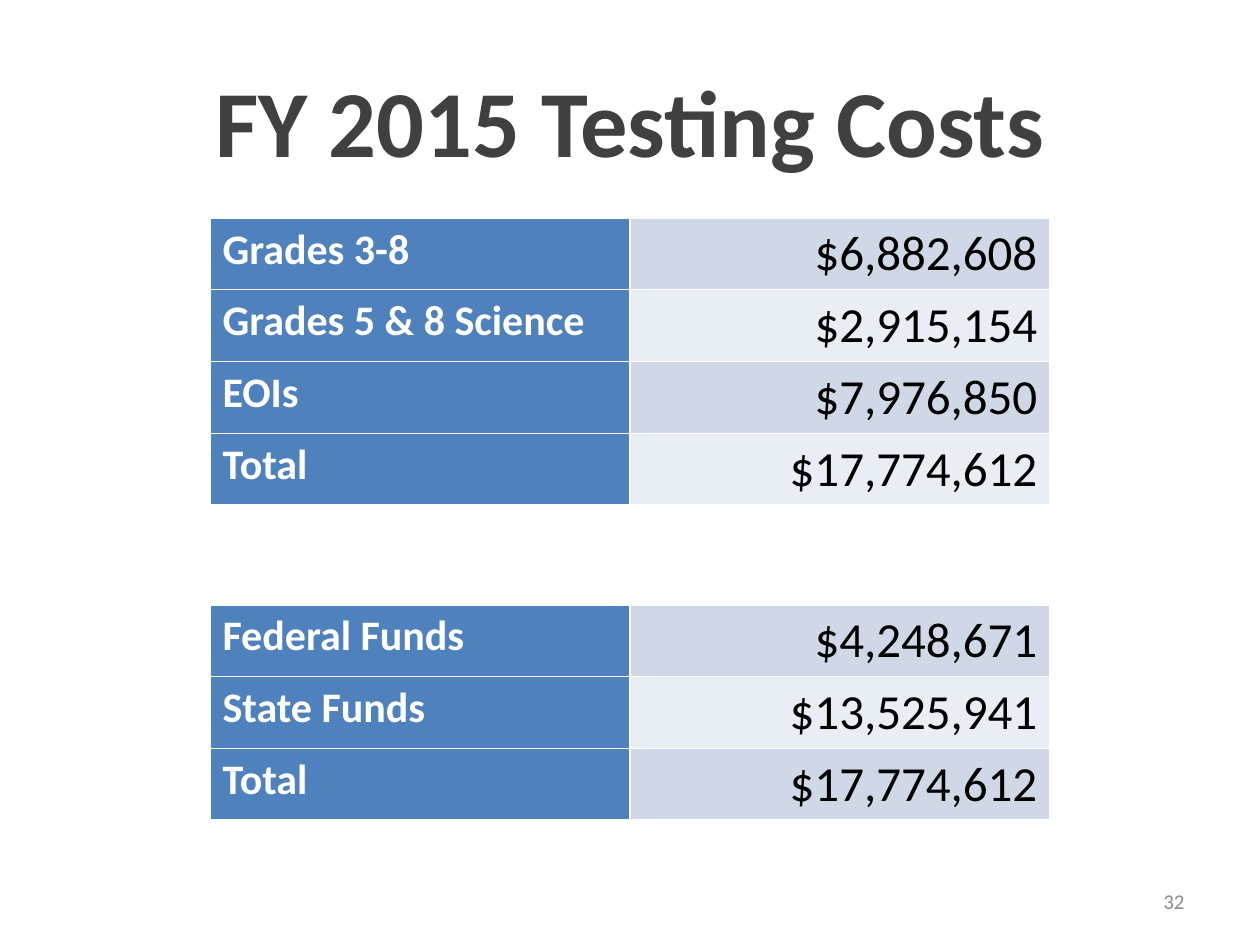
from dataclasses import dataclass

from lxml import etree
from pptx import Presentation
from pptx.dml.color import RGBColor
from pptx.enum.text import MSO_ANCHOR, PP_ALIGN
from pptx.oxml.ns import qn
from pptx.util import Inches, Pt

LEFT, CENTER, RIGHT = PP_ALIGN.LEFT, PP_ALIGN.CENTER, PP_ALIGN.RIGHT
TOP, MIDDLE = MSO_ANCHOR.TOP, MSO_ANCHOR.MIDDLE
TITLE_ONLY = 5


@dataclass(frozen=True)
class Theme:
    font: str = "Calibri"
    title: str = "404040"
    label: str = "FFFFFF"
    label_fill: str = "4F81BD"
    amount: str = "000000"
    bands: tuple = ("D0D8E8", "E9EDF4")
    border: str = "FFFFFF"
    number: str = "8C8C8C"
    title_size: int = 54
    label_size: int = 24
    amount_size: int = 28
    number_size: int = 12


THEME = Theme()
WIDTH, HEIGHT = Inches(10), Inches(7.5)
COLUMN = WIDTH // 6
ROW = Inches(0.57)

COSTS = [
    ("Grades 3-8", "$6,882,608"),
    ("Grades 5 & 8 Science", "$2,915,154"),
    ("EOIs", "$7,976,850"),
    ("Total", "$17,774,612"),
]
FUNDING = [
    ("Federal Funds", "$4,248,671"),
    ("State Funds", "$13,525,941"),
    ("Total", "$17,774,612"),
]


def write(frame, text, size, color, align, bold=False):
    paragraph = frame.paragraphs[0]
    paragraph.alignment = align
    run = paragraph.add_run()
    run.text = text
    run.font.name = THEME.font
    run.font.size = Pt(size)
    run.font.bold = bold
    run.font.color.rgb = RGBColor.from_string(color)


def add_title(slide, text):
    title = slide.shapes.title
    title.left, title.top = 0, Inches(0.42)
    title.width, title.height = WIDTH, Inches(1.17)
    frame = title.text_frame
    frame.vertical_anchor = TOP
    frame.margin_top = Inches(0.08)
    write(frame, text, THEME.title_size, THEME.title, CENTER, True)


def draw_borders(cell):
    properties = cell._tc.get_or_add_tcPr()
    for side in ("a:lnL", "a:lnR", "a:lnT", "a:lnB"):
        line = etree.SubElement(properties, qn(side), w=str(Pt(1)))
        fill = etree.SubElement(line, qn("a:solidFill"))
        etree.SubElement(fill, qn("a:srgbClr"), val=THEME.border)


def fill_cell(cell, fill, *text_style):
    draw_borders(cell)
    cell.fill.solid()
    cell.fill.fore_color.rgb = RGBColor.from_string(fill)
    write(cell.text_frame, *text_style)


def add_amounts(slide, entries, top):
    table = slide.shapes.add_table(
        len(entries), 2, COLUMN, top, 4 * COLUMN, ROW * len(entries)
    ).table
    table.first_row = False
    table.first_col = True
    for index, (label, amount) in enumerate(entries):
        band = THEME.bands[index % len(THEME.bands)]
        fill_cell(table.cell(index, 0), THEME.label_fill,
                  label, THEME.label_size, THEME.label, LEFT, True)
        fill_cell(table.cell(index, 1), band,
                  amount, THEME.amount_size, THEME.amount, RIGHT)


def add_page_number(slide, number):
    box = slide.shapes.add_textbox(
        Inches(7.17), Inches(6.95), Inches(2.33), Inches(0.4)
    )
    frame = box.text_frame
    frame.word_wrap = True
    frame.vertical_anchor = MIDDLE
    write(frame, number, THEME.number_size, THEME.number, RIGHT)


def main():
    deck = Presentation()
    deck.slide_width, deck.slide_height = WIDTH, HEIGHT
    slide = deck.slides.add_slide(deck.slide_layouts[TITLE_ONLY])
    add_page_number(slide, "32")
    add_title(slide, "FY 2015 Testing Costs")
    add_amounts(slide, COSTS, Inches(1.73))
    add_amounts(slide, FUNDING, Inches(4.8))
    deck.save("out.pptx")


if __name__ == "__main__":
    main()
